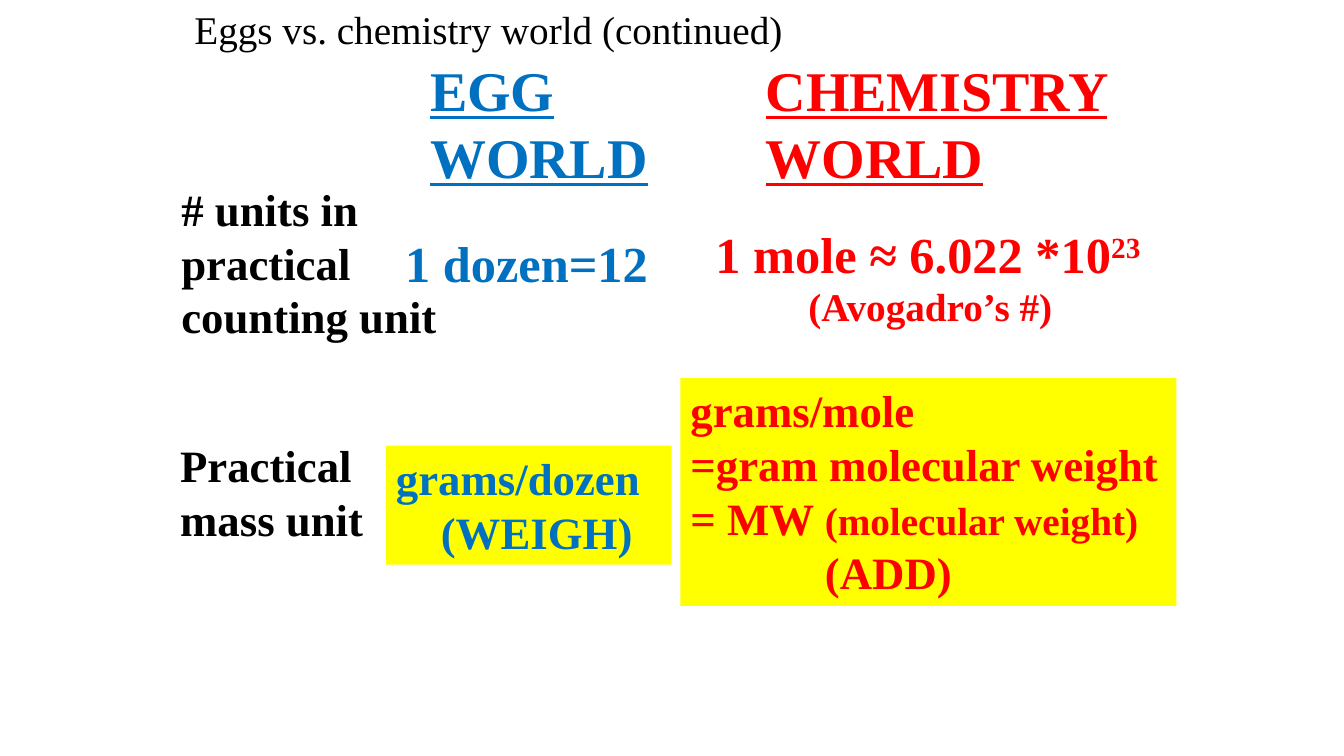
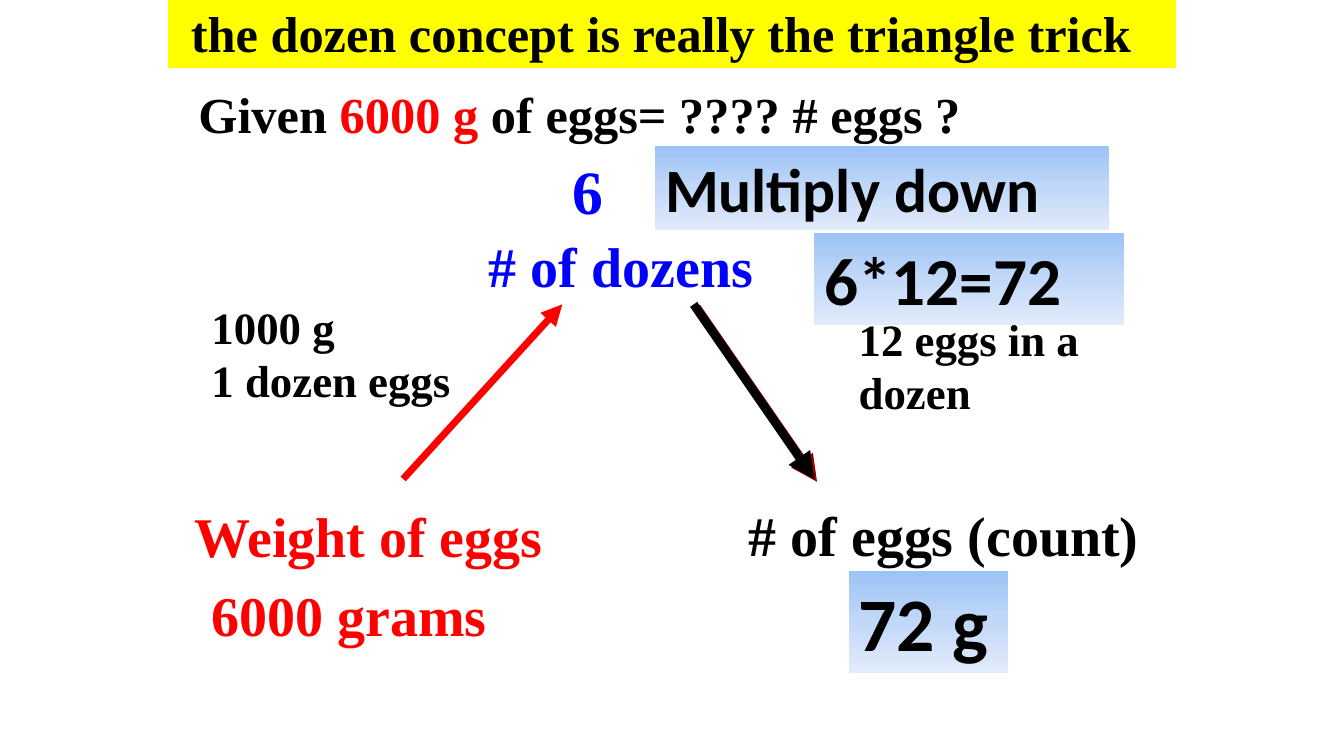
import copy

import pptx
import pptx.dml.color
import pptx.enum.shapes
import pptx.enum.text
import pptx.oxml
import pptx.oxml.ns
import pptx.util

Cm = pptx.util.Cm
Pt = pptx.util.Pt
RGBColor = pptx.dml.color.RGBColor

BLACK = RGBColor(0x00, 0x00, 0x00)
RED = RGBColor(0xFF, 0x00, 0x00)
EGG_BLUE = RGBColor(0x00, 0x70, 0xC0)
DOZEN_BLUE = RGBColor(0x00, 0x00, 0xFF)
YELLOW = RGBColor(0xFF, 0xFF, 0x00)
SKY = [
    (0, RGBColor(0x9A, 0xC3, 0xF5)),
    (0.5, RGBColor(0xC2, 0xD8, 0xF8)),
    (1, RGBColor(0xE1, 0xEB, 0xFB)),
]
SERIF = "Times New Roman"
SANS = "Calibri"
DRAWING = pptx.oxml.ns.nsdecls("a")
NO_EFFECTS = f"<a:effectLst {DRAWING}/>"
RED_SHADOW = (
    f'<a:effectLst {DRAWING}><a:outerShdw dist="35560" dir="2700000">'
    '<a:srgbClr val="990000"/></a:outerShdw></a:effectLst>'
)


def add_text(page, origin, box, lines, size, color=BLACK, font=SERIF, bold=True):
    """Place text; each line is a string or a list of strings, one per run."""
    left, top, width, height = box
    shape = page.shapes.add_textbox(
        Cm(origin[0] + left), Cm(origin[1] + top), Cm(width), Cm(height)
    )
    frame = shape.text_frame
    frame.word_wrap = True
    frame.auto_size = pptx.enum.text.MSO_AUTO_SIZE.SHAPE_TO_FIT_TEXT
    for index, line in enumerate(lines):
        para = frame.paragraphs[0] if index == 0 else frame.add_paragraph()
        for words in [line] if isinstance(line, str) else line:
            span = para.add_run()
            span.text = words
            span.font.name = font
            span.font.size = Pt(size)
            span.font.bold = bold
            span.font.color.rgb = color
    return shape


def fill_yellow(shape):
    shape.fill.solid()
    shape.fill.fore_color.rgb = YELLOW


def fill_sky(shape):
    shape.fill.gradient()
    shape.fill.gradient_angle = 270
    stops = shape._element.spPr.find(".//" + pptx.oxml.ns.qn("a:gsLst"))
    stops.insert(1, copy.deepcopy(stops[0]))
    for stop, (position, color) in zip(shape.fill.gradient_stops, SKY):
        stop.position = position
        stop.color.rgb = color


def indent(para, distance):
    para._p.get_or_add_pPr().set("marL", str(Cm(distance)))


def add_arrow(page, origin, start, end, color, weight, effects=NO_EFFECTS):
    points = [Cm(origin[axis] + point[axis]) for point in (start, end) for axis in (0, 1)]
    arrow = page.shapes.add_connector(pptx.enum.shapes.MSO_CONNECTOR.STRAIGHT, *points)
    arrow.line.color.rgb = color
    arrow.line.width = Pt(weight)
    arrow.line._get_or_add_ln().append(
        pptx.oxml.parse_xml(f'<a:tailEnd {DRAWING} type="triangle"/>')
    )
    arrow._element.spPr.append(pptx.oxml.parse_xml(effects))


# Comparison of the two worlds
def world_headings(page, origin):
    egg = add_text(page, origin, (0, 0, 6.35, 3.68), ["EGG WORLD"], 40, EGG_BLUE)
    chemistry = add_text(page, origin, (8.46, 0, 9.53, 3.68), ["CHEMISTRY WORLD"], 40, RED)
    for heading in (egg, chemistry):
        heading.text_frame.paragraphs[0].runs[0].font.underline = True


def counting_row(page, origin):
    add_text(page, origin, (0, 0, 7.34, 4.37), ["# units in practical counting unit"], 32)
    add_text(page, origin, (5.64, 1.27, 6.78, 1.8), ["1 dozen=12"], 36, EGG_BLUE)
    mole = add_text(
        page, origin, (13.46, 1.06, 11.86, 1.8), [["1 mole ≈ 6.022 *10", "23"]], 36, RED
    )
    exponent = mole.text_frame.paragraphs[0].runs[1]
    exponent._r.get_or_add_rPr().set("baseline", "30000")
    add_text(page, origin, (15.8, 2.54, 8.05, 1.45), ["(Avogadro’s #)"], 28, RED)


def mass_row(page, origin):
    add_text(page, origin, (0, 1.37, 5.72, 3), ["Practical mass unit"], 32)
    dozen = add_text(
        page, origin, (5.44, 1.7, 7.2, 3), ["grams/dozen", "(WEIGH)"], 32, EGG_BLUE
    )
    mole_lines = [
        "grams/mole",
        "=gram molecular weight",
        ["= MW ", "(molecular weight)"],
        "(ADD)",
    ]
    mole = add_text(page, origin, (12.86, 0, 12.5, 5.74), mole_lines, 32, RED)
    mole.text_frame.paragraphs[2].runs[1].font.size = Pt(28)
    for shape, distance in ((dozen, 1.13), (mole, 3.39)):
        fill_yellow(shape)
        indent(shape.text_frame.paragraphs[-1], distance)


def comparison_slide(page):
    add_text(
        page, (4.65, 0), (0, 0, 15.44, 1.45),
        ["Eggs vs. chemistry world (continued)"], 28, bold=False,
    )
    world_headings(page, (10.59, 1.27))
    counting_row(page, (4.32, 4.45))
    mass_row(page, (4.29, 9.53))


# Triangle trick
def question(page, origin):
    banner = add_text(
        page, origin, (0, 0, 25.4, 1.8),
        ["the dozen concept is really the triangle trick"], 36,
    )
    fill_yellow(banner)
    banner.text_frame.margin_left = Cm(0.57)
    given = add_text(
        page, origin, (0.51, 2.04, 24.97, 1.8),
        [["Given ", "6000 g", " of eggs= ???? # eggs ?"]], 36,
    )
    given.text_frame.paragraphs[0].runs[1].font.color.rgb = RED


def triangle(page, origin):
    # Corners and conversion factors
    labels = [
        ((9.52, 0.05, 2.34, 2.13), ["6"], 44, DOZEN_BLUE),
        ((7.42, 2.04, 10.8, 1.96), ["# of dozens"], 40, DOZEN_BLUE),
        ((0, 8.84, 10.16, 1.96), ["Weight of eggs"], 40, RED),
        ((0.43, 10.82, 9.32, 1.96), ["6000 grams"], 40, RED),
        ((13.97, 8.82, 10.36, 1.96), ["# of eggs (count)"], 40, BLACK),
        ((0.43, 3.74, 6.55, 3), ["1000 g", "1 dozen eggs"], 32, BLACK),
        ((16.74, 4.04, 6.99, 3), ["12 eggs in a dozen"], 32, BLACK),
    ]
    for box, lines, size, color in labels:
        add_text(page, origin, box, lines, size, color)

    # Sides
    add_arrow(page, origin, (5.51, 8.39), (9.52, 3.99), RED, 5)
    add_arrow(page, origin, (12.83, 3.99), (15.87, 8.39), BLACK, 6.25, RED_SHADOW)

    # Working and answer
    steps = [
        ((11.86, 0, 11.43, 2.13), "Multiply down", 44),
        ((15.87, 2.19, 7.82, 2.31), "6*12=72", 48),
        ((16.74, 10.7, 4.01, 2.57), "72 g", 54),
    ]
    for box, words, size in steps:
        fill_sky(add_text(page, origin, box, [words], size, font=SANS))


def triangle_slide(page):
    question(page, (4.24, -0.08))
    triangle(page, (4.65, 3.68))


def main():
    deck = pptx.Presentation()
    deck.slide_width = Cm(33.87)
    deck.slide_height = Cm(19.05)
    for build in (comparison_slide, triangle_slide):
        build(deck.slides.add_slide(deck.slide_layouts[6]))
    deck.save("out.pptx")


if __name__ == "__main__":
    main()
